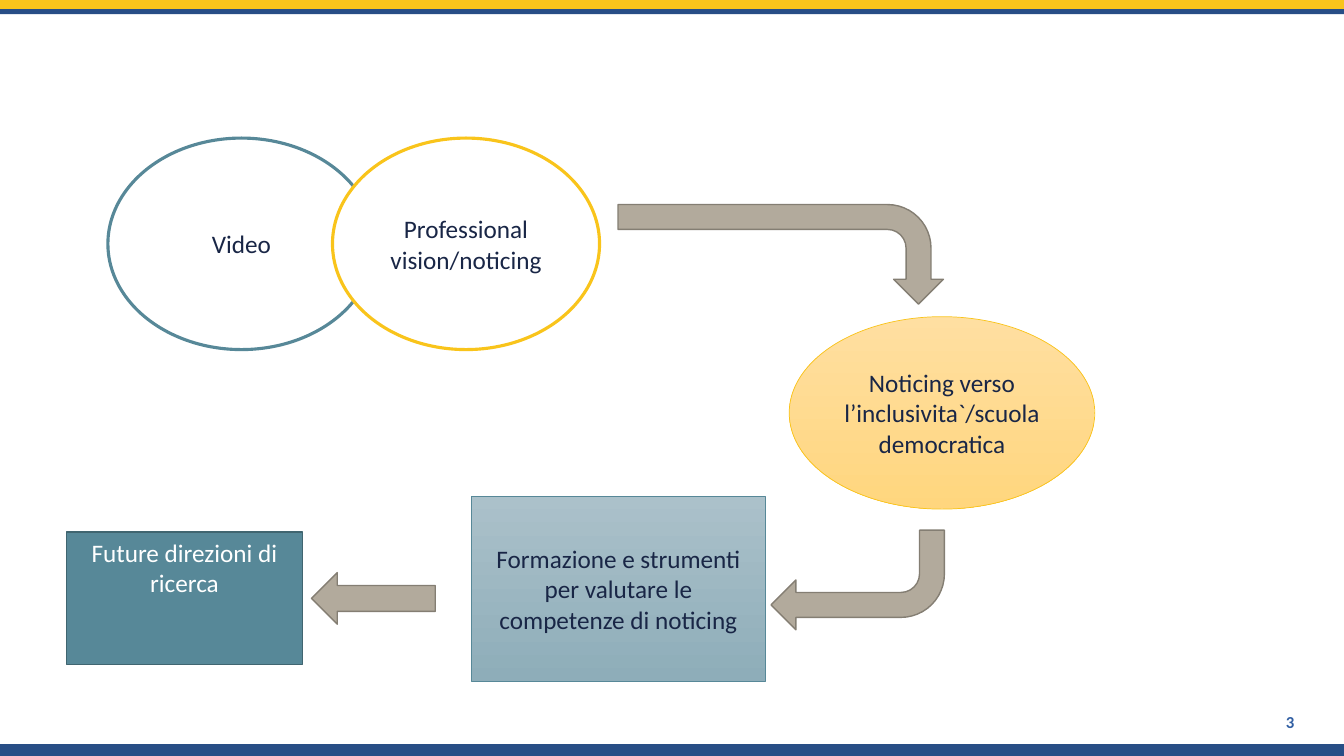
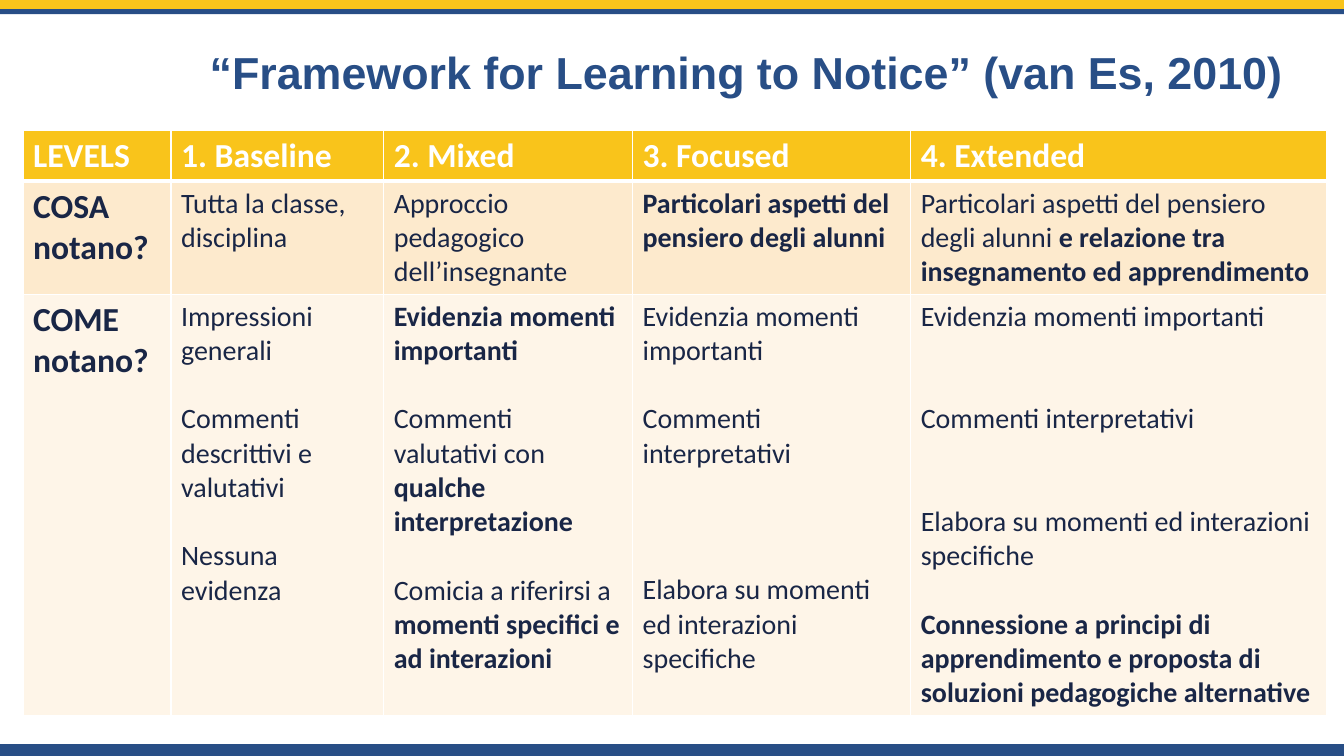
import pptx
import pptx.util
import pptx.dml.color
import pptx.enum.shapes
import pptx.enum.text
import pptx.oxml.ns
import lxml.etree

Cm = pptx.util.Cm
Pt = pptx.util.Pt
SHAPE = pptx.enum.shapes.MSO_SHAPE
ALIGN = pptx.enum.text.PP_ALIGN
ANCHOR = pptx.enum.text.MSO_ANCHOR

COLOURS = {
    "navy": "284E86",
    "yellow": "F9C41B",
    "ink": "192646",
    "white": "FFFFFF",
    "number": "315FA3",
    "teal": "578898",
    "dark_teal": "406570",
    "stone": "B2AA9C",
    "dark_stone": "847E73",
    "sand_top": "FFDFA1",
    "sand_bottom": "FFD67E",
    "mist_top": "ABC1CA",
    "mist_bottom": "8EADB9",
    "cosa_row": "FDEACD",
    "come_row": "FEF5E8",
}
WIDTH, HEIGHT = 33.87, 19.05
BODY_FONT = "Calibri"
TITLE_FONT = "Arial"
BLANK_LINE = 24.4

LEVELS = ["LEVELS", "1. Baseline", "2. Mixed", "3. Focused", "4. Extended"]
COLUMN_WIDTHS = [3.73, 5.36, 6.27, 7.01, 10.49]
ROW_HEIGHTS = [1.28, 2.84, 10.6]

# Each paragraph: blank lines above, regular text, bold text.
COSA = [
    [(0, "Tutta la classe,", ""), (0, "disciplina", "")],
    [(0, "Approccio pedagogico dell’insegnante", "")],
    [(0, "", "Particolari aspetti del pensiero degli alunni")],
    [(0, "Particolari aspetti del pensiero degli alunni ",
      "e relazione tra insegnamento ed apprendimento")],
]
COME = [
    [(0, "Impressioni generali", ""),
     (1, "Commenti descrittivi e valutativi", ""),
     (1, "Nessuna evidenza", "")],
    [(0, "", "Evidenzia momenti importanti"),
     (1, "Commenti valutativi con ", "qualche interpretazione"),
     (1, "Comicia a riferirsi a ", "momenti specifici e ad interazioni")],
    [(0, "Evidenzia momenti importanti", ""),
     (1, "Commenti interpretativi", ""),
     (3, "Elabora su momenti ed interazioni specifiche", "")],
    [(0, "Evidenzia momenti importanti", ""),
     (2, "Commenti interpretativi", ""),
     (2, "Elabora su momenti ed interazioni specifiche", ""),
     (1, "", "Connessione a principi di apprendimento e proposta di "
             "soluzioni pedagogiche alternative")],
]


def rgb(name):
    return pptx.dml.color.RGBColor.from_string(COLOURS[name])


def add_run(paragraph, text, size, colour, bold=False, font=BODY_FONT):
    run = paragraph.add_run()
    run.text = text
    run.font.name = font
    run.font.size = Pt(size)
    run.font.bold = bold
    run.font.color.rgb = rgb(colour)


def add_figure(slide, preset, box, fill, line=None, weight=1):
    figure = slide.shapes.add_shape(preset, *map(Cm, box))
    figure.shadow.inherit = False
    if isinstance(fill, tuple):
        figure.fill.gradient()
        figure.fill.gradient_angle = 270
        for stop, colour, position in zip(figure.fill.gradient_stops, fill, (0, 1)):
            stop.color.rgb = rgb(colour)
            stop.position = position
    else:
        figure.fill.solid()
        figure.fill.fore_color.rgb = rgb(fill)
    if line:
        figure.line.color.rgb = rgb(line)
        figure.line.width = Pt(weight)
    else:
        figure.line.fill.background()
    return figure


def add_concept(slide, preset, box, text, fill, line, weight,
                colour="ink", anchor=ANCHOR.MIDDLE):
    frame = add_figure(slide, preset, box, fill, line, weight).text_frame
    frame.word_wrap = True
    frame.vertical_anchor = anchor
    frame.paragraphs[0].alignment = ALIGN.CENTER
    add_run(frame.paragraphs[0], text, 18, colour)


def add_bands(slide):
    for top, height, colour in ((HEIGHT - 0.3, 0.3, "navy"),
                                (0, 0.3, "yellow"),
                                (0.23, 0.13, "navy")):
        add_figure(slide, SHAPE.RECTANGLE, (0, top, WIDTH, height), colour)


def add_slide_number(slide, number, box):
    frame = slide.shapes.add_textbox(*map(Cm, box)).text_frame
    frame.word_wrap = True
    frame.vertical_anchor = ANCHOR.MIDDLE
    frame.paragraphs[0].alignment = ALIGN.RIGHT
    add_run(frame.paragraphs[0], number, 12, "number", bold=True)


def set_title(slide, text, box):
    title = slide.shapes.title
    title.left, title.top, title.width, title.height = map(Cm, box)
    frame = title.text_frame
    frame.word_wrap = True
    frame.vertical_anchor = ANCHOR.MIDDLE
    frame.paragraphs[0].alignment = ALIGN.LEFT
    frame.paragraphs[0].line_spacing = 0.9
    add_run(frame.paragraphs[0], text, 32, "navy", bold=True, font=TITLE_FONT)


def add_research_flow(slide, left, top):
    concepts = [
        (SHAPE.OVAL, (1.04, 0, 6.73, 5.33), "Video",
         "white", "teal", 2.25),
        (SHAPE.OVAL, (6.7, 0, 6.73, 5.33), "Professional vision/noticing",
         "white", "yellow", 2.25),
        (SHAPE.OVAL, (18.21, 4.5, 7.7, 4.85),
         "Noticing verso l’inclusivita`/scuola democratica",
         ("sand_top", "sand_bottom"), "yellow", 0.5),
        (SHAPE.RECTANGLE, (10.21, 9.02, 7.39, 4.67),
         "Formazione e strumenti per valutare le competenze di noticing",
         ("mist_top", "mist_bottom"), "teal", 0.5),
        (SHAPE.RECTANGLE, (0, 9.93, 5.94, 3.33), "Future direzioni di ricerca",
         "teal", "dark_teal", 1, "white", ANCHOR.TOP),
    ]
    arrows = [
        (SHAPE.BENT_ARROW, (16.74, -1.17, 2.51, 8.2), 90),
        (SHAPE.BENT_ARROW, (17.75, 9.88, 4.37, 2.51), 180),
        (SHAPE.LEFT_ARROW, (6.17, 10.95, 3.12, 1.3), 0),
    ]

    def place(box):
        x, y, width, height = box
        return left + x, top + y, width, height

    for preset, box, *details in concepts:
        add_concept(slide, preset, place(box), *details)
    for preset, box, turn in arrows:
        arrow = add_figure(slide, preset, place(box), "stone", "dark_stone")
        arrow.rotation = turn


def set_borders(cell, bottom):
    properties = cell._tc.get_or_add_tcPr()
    qn = pptx.oxml.ns.qn
    for side, weight in (("L", 1), ("R", 1), ("T", 1), ("B", bottom)):
        border = lxml.etree.SubElement(properties, qn(f"a:ln{side}"), w=str(Pt(weight)))
        fill = lxml.etree.SubElement(border, qn("a:solidFill"))
        lxml.etree.SubElement(fill, qn("a:srgbClr"), val=COLOURS["white"])


def fill_cell(cell, paragraphs, size, colour, fill, bottom=1):
    set_borders(cell, bottom)
    cell.fill.solid()
    cell.fill.fore_color.rgb = rgb(fill)
    frame = cell.text_frame
    for index, (blank_lines, regular, bold) in enumerate(paragraphs):
        paragraph = frame.add_paragraph() if index else frame.paragraphs[0]
        if blank_lines:
            paragraph.space_before = Pt(blank_lines * BLANK_LINE)
        if regular:
            add_run(paragraph, regular, size, colour)
        if bold:
            add_run(paragraph, bold, size, colour, bold=True)


def add_framework_table(slide, left, top):
    framework = slide.shapes.add_table(
        len(ROW_HEIGHTS), len(COLUMN_WIDTHS), Cm(left), Cm(top),
        Cm(sum(COLUMN_WIDTHS)), Cm(sum(ROW_HEIGHTS))).table
    framework.horz_banding = False
    for column, width in zip(framework.columns, COLUMN_WIDTHS):
        column.width = Cm(width)
    for row, height in zip(framework.rows, ROW_HEIGHTS):
        row.height = Cm(height)
    for column, level in enumerate(LEVELS):
        fill_cell(framework.cell(0, column), [(0, "", level)], 24,
                  "white", "yellow", bottom=3)
    questions = (("COSA notano?", COSA, "cosa_row"),
                 ("COME notano?", COME, "come_row"))
    for row, (question, answers, fill) in enumerate(questions, 1):
        fill_cell(framework.cell(row, 0), [(0, "", question)], 24, "ink", fill)
        for column, answer in enumerate(answers, 1):
            fill_cell(framework.cell(row, column), answer, 20, "ink", fill)


def build_flow_slide(deck):
    slide = deck.slides.add_slide(deck.slide_layouts[6])
    add_bands(slide)
    add_slide_number(slide, "3", (25.48, 17.68, 7.39, 1.02))
    add_research_flow(slide, 1.68, 3.48)


def build_framework_slide(deck):
    slide = deck.slides.add_slide(deck.slide_layouts[5])
    add_bands(slide)
    set_title(slide, "“Framework for Learning to Notice” (van Es, 2010)",
              (5.03, 0.76, 28.6, 2.26))
    add_framework_table(slide, 0.58, 3.28)


def main():
    deck = pptx.Presentation()
    deck.slide_width, deck.slide_height = Cm(WIDTH), Cm(HEIGHT)
    build_flow_slide(deck)
    build_framework_slide(deck)
    deck.save("out.pptx")


if __name__ == "__main__":
    main()
